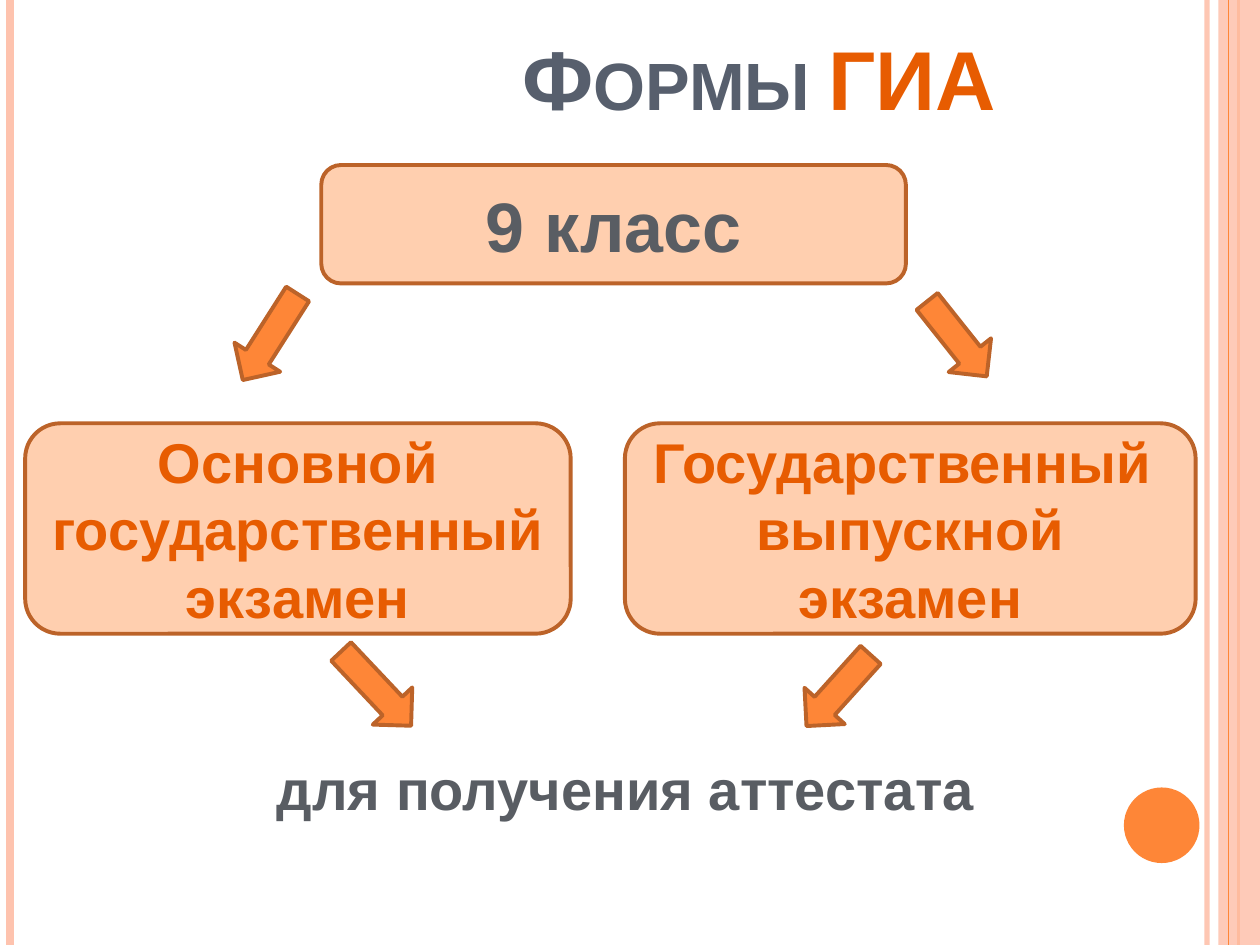
from pptx import Presentation
from pptx.dml.color import RGBColor
from pptx.enum.shapes import MSO_CONNECTOR as LINE, MSO_SHAPE as SHAPE
from pptx.enum.text import MSO_ANCHOR as ANCHOR, MSO_AUTO_SIZE as FIT, PP_ALIGN as ALIGN
from pptx.oxml.ns import qn
from pptx.oxml.xmlchemy import OxmlElement
from pptx.util import Inches, Pt

COLORS = {
    "pale": "FEC3AE", "orange": "FE8637", "edge": "BC6329", "box": "FFCFAF",
    "accent": "E75C01", "slate": "575F6D", "gray": "595D63",
}


class ExamSlide:
    """Draws styled elements on one slide, on a grid of 100 columns by 75 rows."""

    font = "Arial"

    def __init__(self, prs):
        self.cell = prs.slide_width / 100
        self.height = 75
        self.s = prs.slides.add_slide(prs.slide_layouts[1])

    def units(self, *lengths):
        return [round(n * self.cell) for n in lengths]

    def color(self, name):
        return RGBColor.from_string(COLORS[name])

    def fade(self, sp, percent):
        alpha = OxmlElement("a:alpha")
        alpha.set("val", str(percent * 1000))
        next(sp._element.spPr.iter(qn("a:srgbClr"))).append(alpha)

    def run(self, p, text, size, color, small=False):
        r = p.add_run()
        r.text = text
        r.font.name, r.font.size, r.font.bold = self.font, Pt(size), True
        r.font.color.rgb = self.color(color)
        if small:
            r.font._element.set("cap", "small")

    def placeholder(self, idx, at, runs, anchor):
        sp = self.s.placeholders[idx]
        sp.left, sp.top, sp.width, sp.height = self.units(*at)
        tf = sp.text_frame
        tf.auto_size, tf.word_wrap, tf.vertical_anchor = FIT.NONE, True, anchor
        p = tf.paragraphs[0]
        p.alignment = ALIGN.CENTER
        for run in runs:
            self.run(p, *run)
        return sp

    def title(self, at, runs, indent):
        sp = self.placeholder(0, at, runs, ANCHOR.BOTTOM)
        sp.text_frame.margin_left = self.units(indent)[0]

    def body(self, at, runs):
        sp = self.placeholder(1, at, runs, ANCHOR.TOP)
        pPr = sp.text_frame.paragraphs[0]._p.get_or_add_pPr()
        pPr.set("marL", "0")
        pPr.set("indent", "0")
        pPr.append(OxmlElement("a:buNone"))

    def stripe(self, x, color, width, opacity=100):
        ends = self.units(x, 0, x, self.height)
        line = self.s.shapes.add_connector(LINE.STRAIGHT, *ends)
        line.line.color.rgb, line.line.width = self.color(color), Pt(width)
        line._element.spPr.append(OxmlElement("a:effectLst"))
        if opacity < 100:
            self.fade(line, opacity)

    def shape(self, kind, at, fill, edge=None):
        sp = self.s.shapes.add_shape(kind, *self.units(*at))
        sp.shadow.inherit = False
        sp.fill.solid()
        sp.fill.fore_color.rgb = self.color(fill)
        if edge:
            sp.line.color.rgb, sp.line.width = self.color(edge), Pt(2.25)
        else:
            sp.line.fill.background()
        return sp

    def box(self, at, lines, size, color):
        tf = self.shape(SHAPE.ROUNDED_RECTANGLE, at, "box", "edge").text_frame
        tf.word_wrap, tf.vertical_anchor = True, ANCHOR.MIDDLE
        for i, text in enumerate(lines):
            p = tf.add_paragraph() if i else tf.paragraphs[0]
            p.alignment = ALIGN.CENTER
            self.run(p, text, size, color)

    def arrow(self, x, y, length, angle):
        sp = self.shape(SHAPE.DOWN_ARROW, (x, y, 4.3, length), "orange", "edge")
        sp.rotation = angle


def main():
    prs = Presentation()
    prs.slide_width, prs.slide_height = Inches(10), Inches(7.5)
    slide = ExamSlide(prs)

    slide.stripe(95.8, "pale", 3, 93)
    slide.stripe(0.8, "pale", 4.5)
    slide.stripe(98.3, "orange", 1.5)
    slide.fade(slide.shape(SHAPE.RECTANGLE, (96.7, 0, 3.3, 75), "pale"), 87)
    slide.stripe(97.5, "orange", 0.75)
    slide.shape(SHAPE.OVAL, (89.2, 62.5, 6, 6), "orange")

    slide.title((4.9, 2.9, 84.4, 7.7),
                [("Формы ", 47.7, "slate", True), ("ГИА", 47.7, "accent", True)], 14)
    slide.body((20.9, 59.4, 57.5, 9.5), [("для получения аттестата", 32, "gray")])

    slide.box((25.5, 13.1, 46.4, 9.4), ["9 класс"], 40, "gray")
    exams = [
        (49.6, 45.3, ["Государственный ", "выпускной", "экзамен"]),
        (2, 43.3, ["Основной государственный экзамен"]),
    ]
    for x, width, lines in exams:
        slide.box((x, 33.6, width, 16.7), lines, 32, "accent")

    arrows = [(19.3, 22.7, 8.1, 32.5), (73.8, 23.1, 7.6, 321.5),
              (27.7, 50.6, 8.1, 316.7), (64.4, 51, 7.6, 42)]
    for arrow in arrows:
        slide.arrow(*arrow)

    prs.save("out.pptx")


if __name__ == "__main__":
    main()
